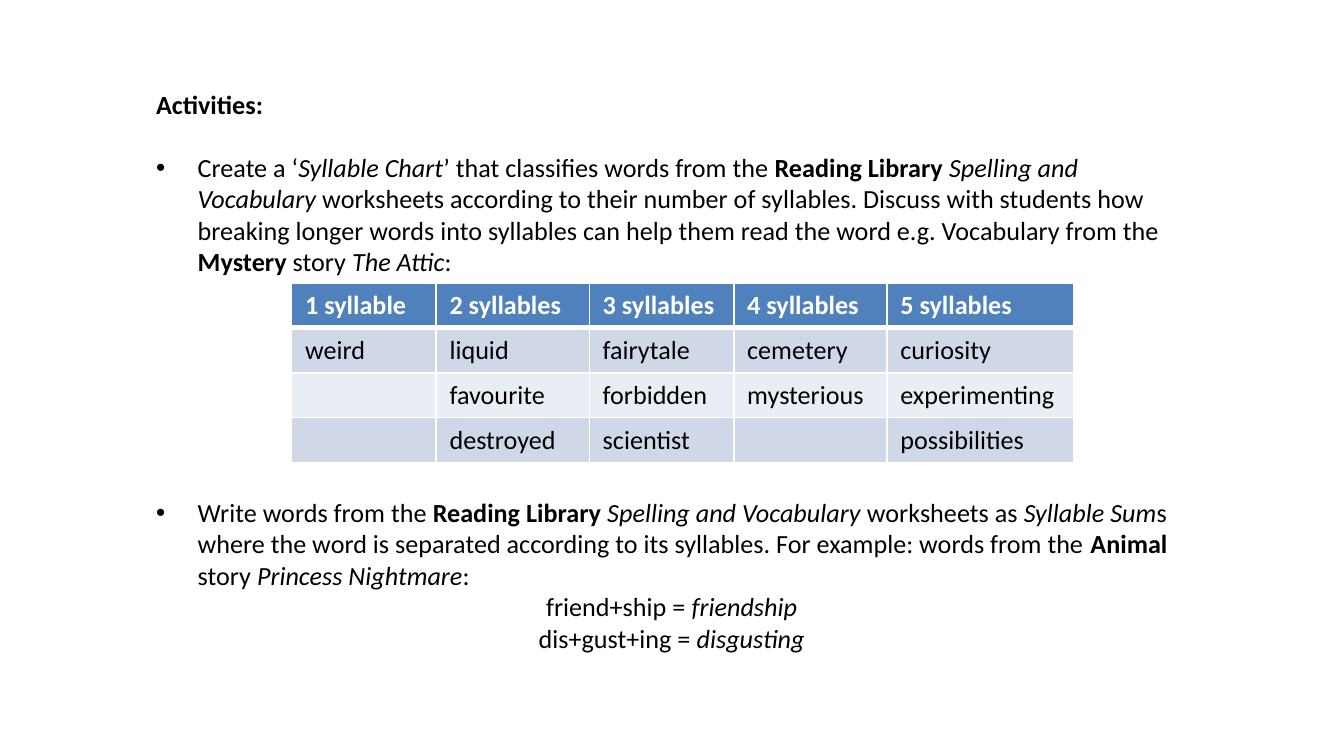
from lxml import etree
from pptx import Presentation
from pptx.dml.color import RGBColor
from pptx.enum.text import MSO_AUTO_SIZE, PP_ALIGN
from pptx.oxml.ns import qn
from pptx.util import Inches, Pt

CENTER = PP_ALIGN.CENTER
GROW = MSO_AUTO_SIZE.SHAPE_TO_FIT_TEXT

THEME = {
    "font": "Calibri", "size": 14, "ink": "000000", "paper": "FFFFFF",
    "header": "4F81BD", "bands": ("D0D8E8", "E9EDF4"),
    "rule": 1, "header_rule": 3,
}
LINE = 16.8  # points from one text line to the next
INDENT = Inches(0.31)
BOLD, ITALIC = {"bold": True}, {"italic": True}

prs = Presentation()
prs.slide_width = Inches(10)
prs.slide_height = prs.slide_width * 9 // 16
X, Y = prs.slide_width / 100, prs.slide_height / 100  # one percent of the slide
s = prs.slides.add_slide(prs.slide_layouts[6])


def add_run(p, text, color, style):
    r = p.add_run()
    r.text = text
    r.font.color.rgb = RGBColor.from_string(color)
    formats = {"name": THEME["font"], "size": Pt(THEME["size"]), **style}
    for name, value in formats.items():
        setattr(r.font, name, value)


def add_border(cell, side, width):
    ln = etree.SubElement(cell._tc.get_or_add_tcPr(), qn(f"a:ln{side}"), w=str(Pt(width)))
    fill = etree.SubElement(ln, qn("a:solidFill"))
    etree.SubElement(fill, qn("a:srgbClr"), val=THEME["paper"])


# Each paragraph: lines of space before, kind, runs of text and style
paragraphs = [
    (0, "heading", [("Activities:", BOLD)]),
    (1, "bullet", [
        ("Create a ‘", {}), ("Syllable Chart", ITALIC),
        ("’ that classifies words from the ", {}), ("Reading Library ", BOLD),
        ("Spelling and Vocabulary", ITALIC),
        (" worksheets according to their number of syllables. Discuss with students how "
         "breaking longer words into syllables can help them read the word e.g. "
         "Vocabulary from the ", {}),
        ("Mystery", BOLD), (" story ", {}), ("The Attic", ITALIC), (":", {})]),
    (7, "bullet", [
        ("Write words from the ", {}), ("Reading Library ", BOLD),
        ("Spelling and Vocabulary", ITALIC), (" worksheets as ", {}),
        ("Syllable Sum", ITALIC),
        ("s where the word is separated according to its syllables. For example: "
         "words from the ", {}),
        ("Animal", BOLD), (" story ", {}), ("Princess Nightmare", ITALIC), (":", {})]),
    (0, "sum", [("friend+ship = ", {}), ("friendship", ITALIC)]),
    (0, "sum", [("dis+gust+ing = ", {}), ("disgusting", ITALIC)]),
]

box = s.shapes.add_textbox(int(10.63 * X), int(10.85 * Y), int(78.7 * X), int(77.2 * Y))
tf = box.text_frame
tf.word_wrap = True
tf.auto_size = GROW
for i, (gap, kind, runs) in enumerate(paragraphs):
    p = tf.add_paragraph() if i else tf.paragraphs[0]
    if kind == "bullet":
        pPr = p._p.get_or_add_pPr()
        pPr.set("marL", str(INDENT))
        pPr.set("indent", str(-INDENT))
        etree.SubElement(pPr, qn("a:buFont"), typeface="Arial")
        etree.SubElement(pPr, qn("a:buChar"), char="•")
    elif kind == "sum":
        p.alignment = CENTER
    if gap:
        p.space_before = Pt(gap * LINE)
    for text, style in runs:
        add_run(p, text, THEME["ink"], style)

syllable_rows = [
    ["1 syllable", "2 syllables", "3 syllables", "4 syllables", "5 syllables"],
    ["weird", "liquid", "fairytale", "cemetery", "curiosity"],
    ["", "favourite", "forbidden", "mysterious", "experimenting"],
    ["", "destroyed", "scientist", "", "possibilities"],
]
col_shares = [10.75, 11.4, 10.75, 11.4, 13.9]
row_share = 5.95

table = s.shapes.add_table(
    len(syllable_rows), len(col_shares), int(21.7 * X), int(37.4 * Y),
    int(sum(col_shares) * X), int(len(syllable_rows) * row_share * Y)).table
for col, share in zip(table.columns, col_shares):
    col.width = int(share * X)

for i, words in enumerate(syllable_rows):
    table.rows[i].height = int(row_share * Y)
    header = i == 0
    fill = THEME["header"] if header else THEME["bands"][(i - 1) % 2]
    color = THEME["paper"] if header else THEME["ink"]
    for j, word in enumerate(words):
        cell = table.cell(i, j)
        for side in "LRTB":
            thick = (header and side == "B") or (i == 1 and side == "T")
            add_border(cell, side, THEME["header_rule" if thick else "rule"])
        cell.fill.solid()
        cell.fill.fore_color.rgb = RGBColor.from_string(fill)
        p = cell.text_frame.paragraphs[0]
        if word:
            add_run(p, word, color, {"bold": header})
        else:  # keeps an empty cell as low as its neighbours
            etree.SubElement(p._p, qn("a:endParaRPr"), sz=str(THEME["size"] * 100))

prs.save("out.pptx")
